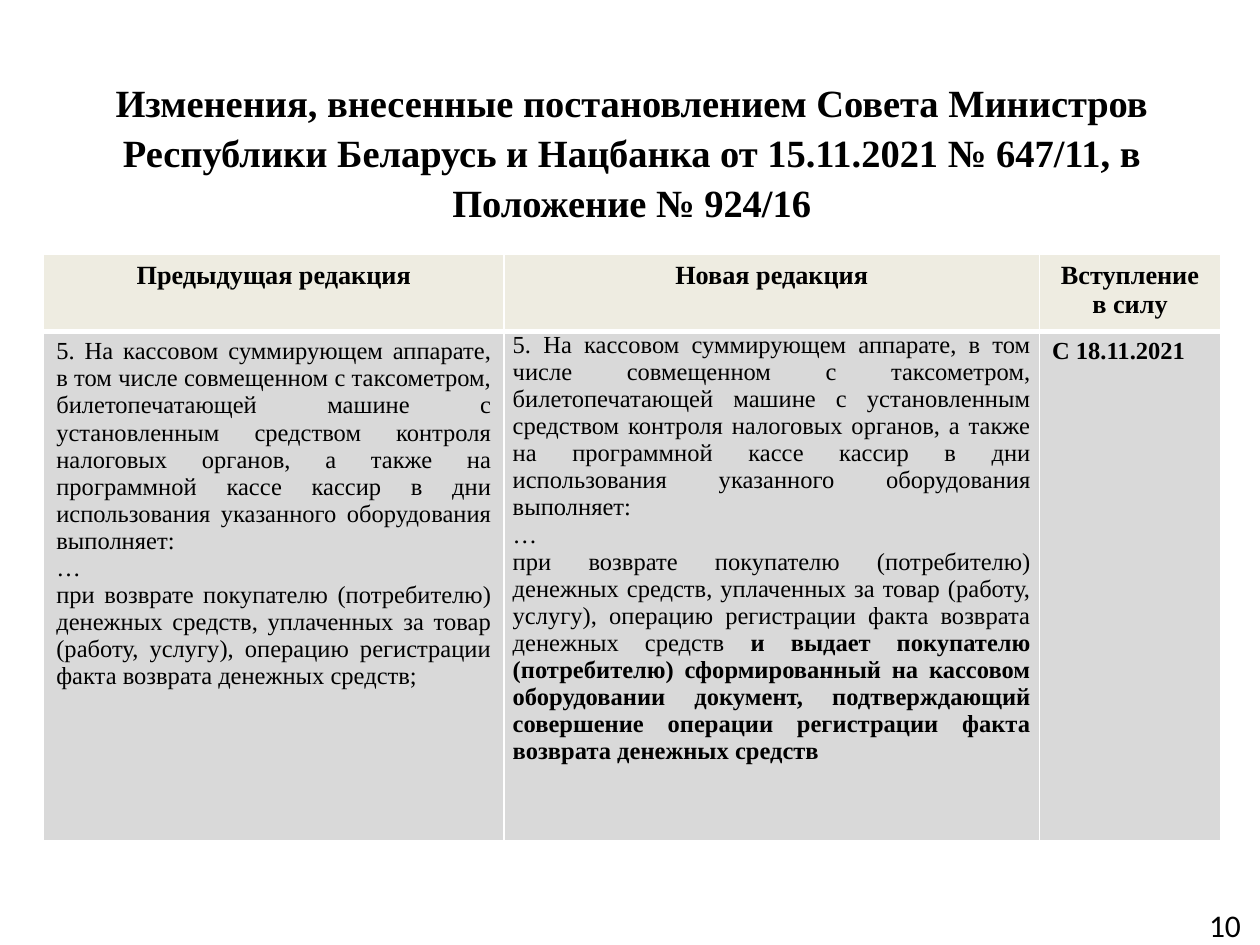
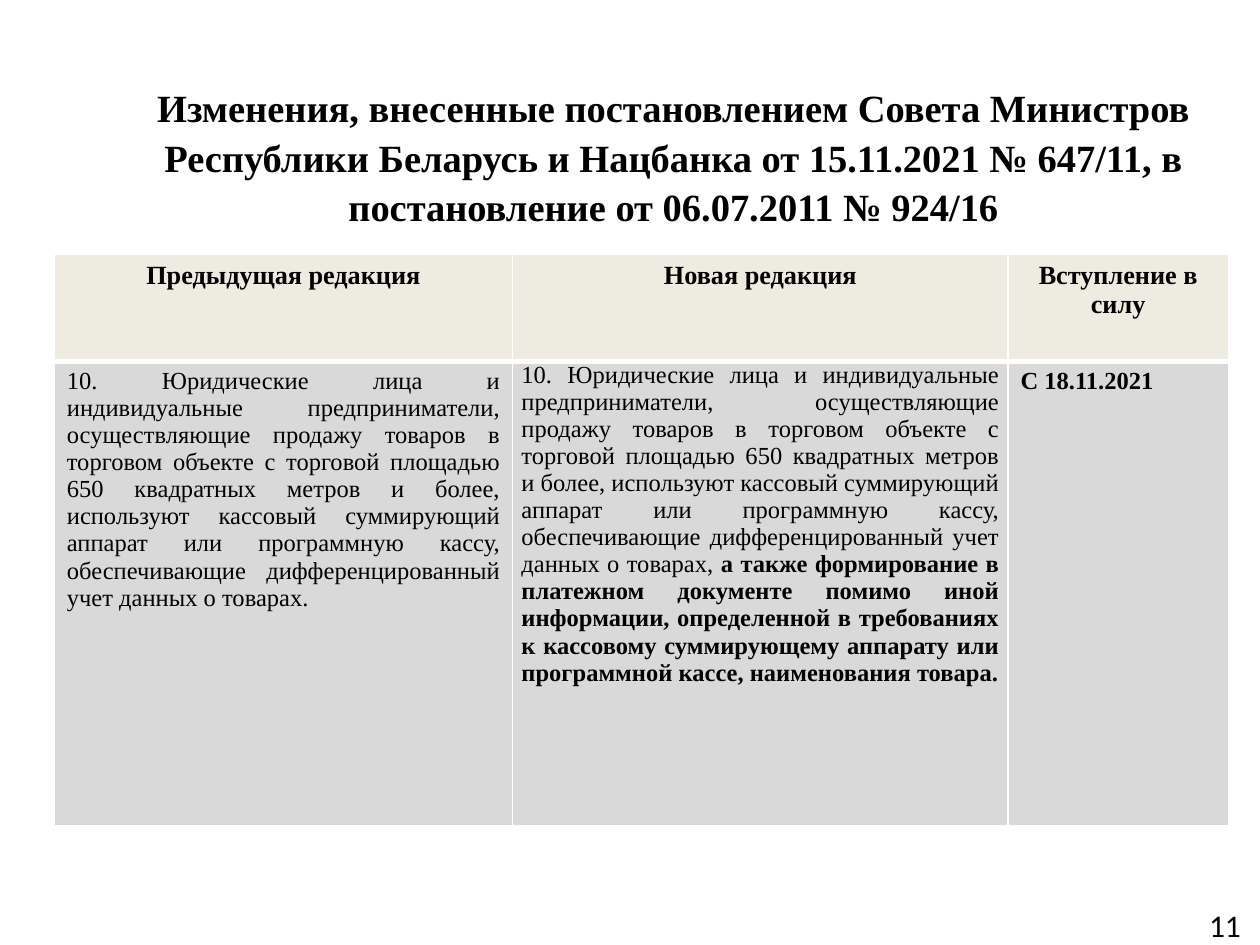
import pptx
import pptx.dml.color
import pptx.enum.text
import pptx.oxml
import pptx.oxml.ns
import pptx.util
from dataclasses import dataclass

Pt = pptx.util.Pt
RGB = pptx.dml.color.RGBColor.from_string
ALIGN = pptx.enum.text.PP_ALIGN
MIDDLE = pptx.enum.text.MSO_ANCHOR.MIDDLE
NOFIT = pptx.enum.text.MSO_AUTO_SIZE.NONE


@dataclass(frozen=True)
class Theme:
    """Hold the colours, fonts and sizes the slides share."""
    ink: str = "000000"
    line: str = "FFFFFF"
    head: str = "EEECE1"
    body: str = "D9D9D9"
    serif: str = "Times New Roman"
    sans: str = "Calibri"
    title: int = 22
    label: int = 15
    text: int = 14
    page: int = 18
    thin: int = 1
    thick: int = 3


THEME = Theme()
HEADS = ["Предыдущая редакция", "Новая редакция", "Вступление в силу"]
LEAD = "Изменения, внесенные постановлением Совета Министров Республики Беларусь и Нацбанка от 15.11.2021 № 647/11, в "
START = "С 18.11.2021"
PAGE = (680, 517, 40, 23)

DUTY = "5. На кассовом суммирующем аппарате, в том числе совмещенном с таксометром, билетопечатающей машине с установленным средством контроля налоговых органов, а также на программной кассе кассир в дни использования указанного оборудования выполняет:"
REFUND = "при возврате покупателю (потребителю) денежных средств, уплаченных за товар (работу, услугу), операцию регистрации факта возврата денежных средств"
STORES = "10. Юридические лица и индивидуальные предприниматели, осуществляющие продажу товаров в торговом объекте с торговой площадью 650 квадратных метров и более, используют кассовый суммирующий аппарат или программную кассу, обеспечивающие дифференцированный учет данных о товарах"

SLIDES = [
    dict(
        page="10", title=LEAD + "Положение № 924/16",
        spot=(25, 66, 672, 40), grid=(25, 145.5),
        cols=[263, 306, 103.5], rows=[44, 291],
        old=[DUTY, "…", REFUND + ";"],
        new=[DUTY, "…", REFUND + " "],
        added="и выдает покупателю (потребителю) сформированный на кассовом оборудовании документ, подтверждающий совершение операции регистрации факта возврата денежных средств",
    ),
    dict(
        page="11", title=LEAD + "постановление от 06.07.2011 № 924/16",
        spot=(49.5, 54.5, 670.5, 68), grid=(31, 145.5),
        cols=[262, 283, 126], rows=[61, 265.5],
        old=[STORES + "."],
        new=[STORES + ", "],
        added="а также формирование в платежном документе помимо иной информации, определенной в требованиях к кассовому суммирующему аппарату или программной кассе, наименования товара.",
    ),
]


def assign(item, values):
    """Set each named attribute on the item."""
    for name, value in values.items():
        setattr(item, name, value)


def place(shape, box):
    """Move a shape to a box given in points."""
    assign(shape, dict(zip(("left", "top", "width", "height"), map(Pt, box))))


def write(frame, paras, size, align, font=THEME.serif):
    """Fill a frame with paragraphs made of (text, bold) runs."""
    for num, runs in enumerate(paras):
        para = frame.add_paragraph() if num else frame.paragraphs[0]
        para.alignment = align
        for text, bold in runs:
            run = para.add_run()
            run.text = text
            assign(run.font, dict(name=font, size=Pt(size), bold=bold))
            run.font.color.rgb = RGB(THEME.ink)


def edge(cell, sides):
    """Draw the borders of a cell, with widths in points by side."""
    props = cell._tc.get_or_add_tcPr()
    space = pptx.oxml.ns.nsdecls("a")
    for num, (side, width) in enumerate(sides.items()):
        props.insert(num, pptx.oxml.parse_xml(
            f'<a:ln{side} {space} w="{Pt(width)}"><a:solidFill>'
            f'<a:srgbClr val="{THEME.line}"/></a:solidFill></a:ln{side}>'))


def add_title(slide, text, box):
    """Place and format the title."""
    shape = slide.shapes.title
    place(shape, box)
    frame = shape.text_frame
    assign(frame, dict(word_wrap=True, auto_size=NOFIT, vertical_anchor=MIDDLE))
    write(frame, [[(text, True)]], THEME.title, ALIGN.CENTER)
    frame.paragraphs[0].line_spacing = 1.08


def add_page(slide, text, box):
    """Place the page number in the corner."""
    frame = slide.shapes.add_textbox(*map(Pt, box)).text_frame
    assign(frame, dict(word_wrap=True, vertical_anchor=MIDDLE))
    write(frame, [[(text, False)]], THEME.page, ALIGN.CENTER, THEME.sans)


def add_grid(slide, data):
    """Build the table that sets the old wording beside the new."""
    cols, rows = data["cols"], data["rows"]
    box = (*data["grid"], sum(cols), sum(rows))
    table = slide.shapes.add_table(len(rows), len(cols), *map(Pt, box)).table
    table.horz_banding = False
    for col, width in zip(table.columns, cols):
        col.width = Pt(width)
    for row, height in zip(table.rows, rows):
        row.height = Pt(height)

    old, new = ([[(text, False)] for text in data[key]] for key in ("old", "new"))
    new[-1].append((data["added"], True))
    heads = [[[(text, True)]] for text in HEADS]
    lines = [
        (heads, THEME.head, THEME.label, ALIGN.CENTER, THEME.thin, THEME.thick),
        ([old, new, [[(START, True)]]], THEME.body, THEME.text, ALIGN.JUSTIFY,
         THEME.thick, THEME.thin),
    ]
    for row, (cells, fill, size, align, top, base) in enumerate(lines):
        for col, paras in enumerate(cells):
            cell = table.cell(row, col)
            cell.fill.solid()
            cell.fill.fore_color.rgb = RGB(fill)
            edge(cell, dict(L=THEME.thin, R=THEME.thin, T=top, B=base))
            write(cell.text_frame, paras, size, align)
    assign(table.cell(1, 1), dict(margin_left=Pt(5), margin_right=Pt(5),
                                  margin_top=0, margin_bottom=0))


def add_slide(deck, data):
    """Add one comparison slide."""
    slide = deck.slides.add_slide(deck.slide_layouts[5])
    add_title(slide, data["title"], data["spot"])
    add_page(slide, data["page"], PAGE)
    add_grid(slide, data)


def main():
    """Build and save the deck."""
    deck = pptx.Presentation()
    assign(deck, dict(slide_width=Pt(720), slide_height=Pt(540)))
    for data in SLIDES:
        add_slide(deck, data)
    deck.save("out.pptx")


if __name__ == "__main__":
    main()
